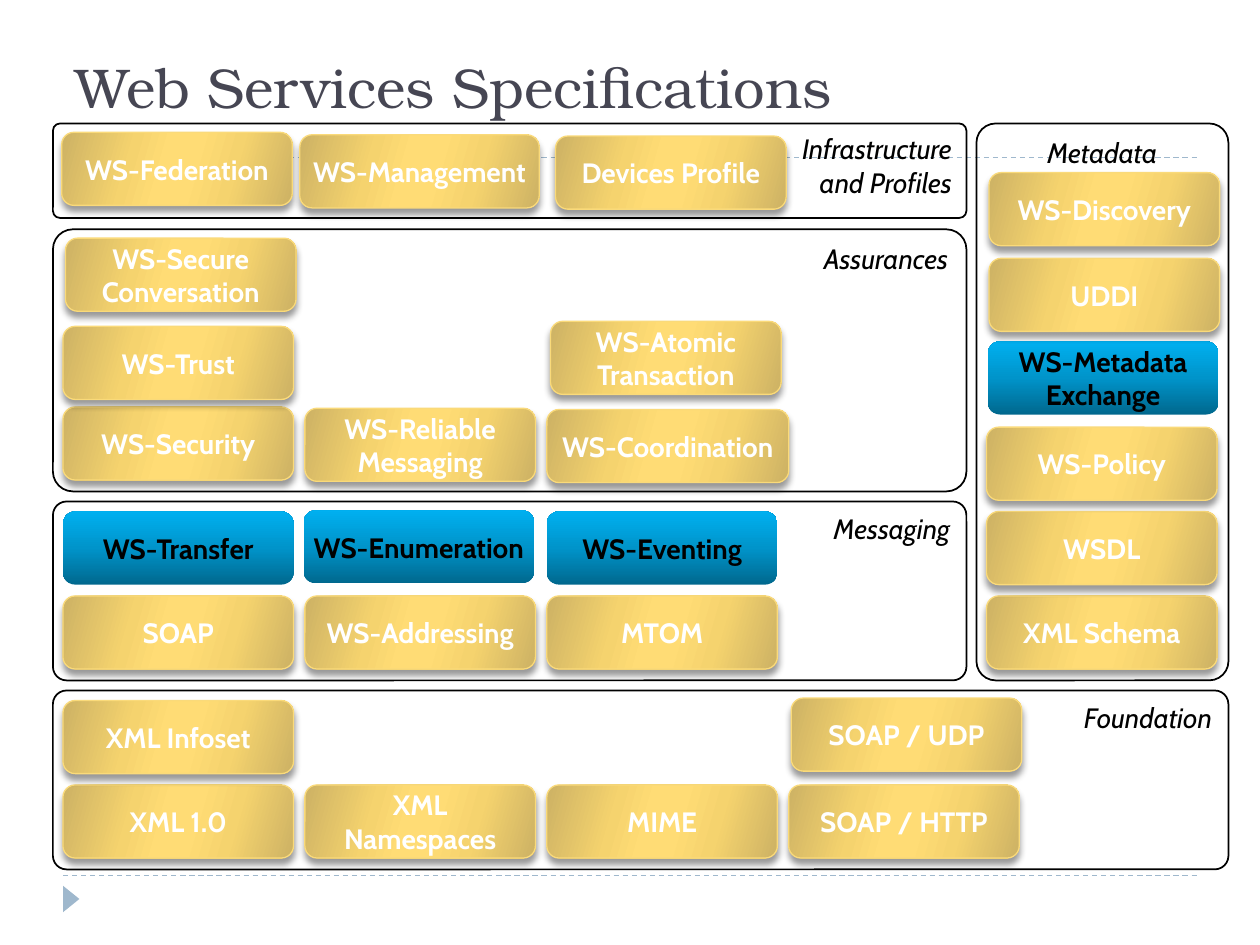
from lxml import etree
from pptx import Presentation
from pptx.dml.color import RGBColor
from pptx.enum import dml, shapes, text
from pptx.oxml import ns
from pptx.util import Inches, Pt

BLACK = RGBColor(0x00, 0x00, 0x00)
WHITE = RGBColor(0xFF, 0xFF, 0xFF)
SLATE = RGBColor(0x46, 0x46, 0x53)
MIST = RGBColor(0x9F, 0xB8, 0xCD)
GOLD_EDGE = RGBColor(0xFA, 0xDA, 0x7A)
GOLD_DARK = RGBColor(0xCD, 0xB2, 0x64)
GOLD_MID = RGBColor(0xF5, 0xD3, 0x6E)
GOLD_LIGHT = RGBColor(0xFF, 0xDC, 0x75)
BLUE_DARK = RGBColor(0x00, 0x68, 0x8E)
BLUE_MID = RGBColor(0x00, 0x94, 0xCA)
BLUE_LIGHT = RGBColor(0x00, 0xB0, 0xF0)

# Gradient stops as (percent, colour); angles run counter-clockwise
GOLD = {"stops": [(0, GOLD_DARK), (30, GOLD_MID), (45, GOLD_LIGHT),
                  (55, GOLD_LIGHT), (73, GOLD_MID), (100, GOLD_DARK)],
        "angle": 344, "edge": GOLD_EDGE, "font": WHITE}
BLUE = {"stops": [(0, BLUE_DARK), (50, BLUE_MID), (100, BLUE_LIGHT)],
        "angle": 90, "edge": None, "font": BLACK}

TITLE = "Web Services Specifications"
TITLE_FONT, BODY_FONT = "TeX Gyre Bonum", "Cabin"
RIGHT, CENTER = text.PP_ALIGN.RIGHT, text.PP_ALIGN.CENTER

# label, frame (left, top, width, height), label alignment,
# rows of specifications from the bottom up (None leaves a gap)
PANELS = [
    ("Assurances", (0.42, 1.82, 7.25, 2.08), RIGHT, [
        ["WS-Security", "WS-Reliable\nMessaging", "WS-Coordination"],
        ["WS-Trust", None, "WS-Atomic\nTransaction"],
        ["WS-Secure\nConversation"]]),
    ("Messaging", (0.42, 3.98, 7.25, 1.42), RIGHT, [
        ["SOAP", "WS-Addressing", "MTOM"],
        ["WS-Transfer", "WS-Enumeration", "WS-Eventing"]]),
    ("Metadata", (7.75, 0.98, 2, 4.42), CENTER, [
        ["XML Schema"], ["WSDL"], ["WS-Policy"],
        ["WS-Metadata\nExchange"], ["UDDI"], ["WS-Discovery"]]),
    ("Infrastructure\nand Profiles", (0.42, 0.98, 7.25, 0.75), RIGHT, [
        ["WS-Federation", "WS-Management", "Devices Profile"]]),
    ("Foundation", (0.42, 5.48, 9.33, 1.42), RIGHT, [
        ["XML 1.0", "XML\nNamespaces", "MIME", "SOAP / HTTP"],
        ["XML Infoset", None, None, "SOAP / UDP"]]),
]
HIGHLIGHTED = {"WS-Transfer", "WS-Enumeration", "WS-Eventing",
               "WS-Metadata\nExchange"}
# Small departures from the grid: left, top, extra width
NUDGES = {
    "WS-Reliable\nMessaging": (0, 0.01, 0),
    "WS-Coordination": (0, 0.02, 0.09),
    "WS-Trust": (0, 0.03, 0),
    "WS-Atomic\nTransaction": (0.03, -0.01, 0),
    "WS-Secure\nConversation": (0.02, 0, 0),
    "WS-Enumeration": (-0.01, -0.01, 0),
    "WS-Metadata\nExchange": (0.01, -0.01, 0),
    "UDDI": (0.02, 0, 0),
    "WS-Discovery": (0.02, -0.01, 0),
    "WS-Federation": (-0.01, -0.01, 0),
    "WS-Management": (-0.04, 0.01, 0.07),
    "Devices Profile": (0.07, 0.02, 0),
    "SOAP / UDP": (0.02, -0.02, 0),
}
BOX_W, BOX_H = 1.83, 0.58
GAP = 0.08
MARGIN = 0.08
COLUMN_STEP = BOX_W + GAP + 0.01
ROW_STEP = BOX_H + GAP + 0.01


def write(shape, words, align, anchor, **font_format):
    frame = shape.text_frame
    frame.text = words
    frame.word_wrap = False
    frame.vertical_anchor = anchor
    color = font_format.pop("color")
    for paragraph in frame.paragraphs:
        paragraph.alignment = align
        for run in paragraph.runs:
            run.font.color.rgb = color
            for key, value in font_format.items():
                setattr(run.font, key, value)


def add_rounded(slide, left, top, width, height, corner):
    shape = slide.shapes.add_shape(
        shapes.MSO_SHAPE.ROUNDED_RECTANGLE,
        Inches(left), Inches(top), Inches(width), Inches(height))
    shape.adjustments[0] = corner
    shape.shadow.inherit = False
    return shape


def add_child(parent, tag, **attributes):
    return etree.SubElement(parent, ns.qn(tag), attributes)


def fill_gradient(shape, stops, angle):
    shape.fill.gradient()
    shape.fill.gradient_angle = angle
    stop_list = shape.element.spPr.find(".//" + ns.qn("a:gsLst"))
    for stop in list(stop_list):
        stop_list.remove(stop)
    for percent, color in stops:
        stop = add_child(stop_list, "a:gs", pos=str(percent * 1000))
        add_child(stop, "a:srgbClr", val=str(color))


def drop_shadow(shape):
    effects = shape.element.spPr.find(ns.qn("a:effectLst"))
    shadow = add_child(effects, "a:outerShdw", blurRad=str(Pt(4)),
                       dist=str(Pt(3.4)), dir="5400000", rotWithShape="0")
    color = add_child(shadow, "a:srgbClr", val=str(BLACK))
    add_child(color, "a:alpha", val="40000")


def add_specification(slide, name, left, top):
    dx, dy, extra = NUDGES.get(name, (0, 0, 0))
    style = BLUE if name in HIGHLIGHTED else GOLD
    box = add_rounded(slide, left + dx, top + dy, BOX_W + extra, BOX_H, 0.167)
    fill_gradient(box, style["stops"], style["angle"])
    if style["edge"] is None:
        box.line.fill.background()
    else:
        box.line.color.rgb = style["edge"]
        box.line.width = Pt(0.75)
        drop_shadow(box)
    write(box, name, CENTER, text.MSO_ANCHOR.MIDDLE, name=BODY_FONT,
          size=Pt(16), bold=True, color=style["font"])


def add_panel(slide, label, frame, align, rows):
    panel = add_rounded(slide, *frame, 0.076)
    panel.fill.background()
    panel.line.color.rgb = BLACK
    panel.line.width = Pt(1)
    write(panel, label, align, text.MSO_ANCHOR.TOP, name=BODY_FONT,
          size=Pt(16), italic=True, color=BLACK)
    left, top, _, height = frame
    bottom_row = top + height - MARGIN - BOX_H - 0.01
    for row, names in enumerate(rows):
        for column, name in enumerate(names):
            if name:
                add_specification(slide, name,
                                  left + MARGIN + column * COLUMN_STEP,
                                  bottom_row - row * ROW_STEP)


def add_decoration(slide):
    for y in (6.95, 1.25):
        rule = slide.shapes.add_connector(
            shapes.MSO_CONNECTOR.STRAIGHT,
            Inches(0.5), Inches(y), Inches(9.5), Inches(y))
        rule.line.color.rgb = MIST
        rule.line.width = Pt(0.75)
        rule.line.dash_style = dml.MSO_LINE.DASH
        add_child(rule._element.spPr, "a:effectLst")
    marker = slide.shapes.add_shape(
        shapes.MSO_SHAPE.ISOSCELES_TRIANGLE,
        Inches(0.46), Inches(7.07), Inches(0.21), Inches(0.13))
    marker.rotation = 90
    marker.shadow.inherit = False
    marker.fill.solid()
    marker.fill.fore_color.rgb = MIST
    marker.line.fill.background()


def add_title(slide):
    title = slide.shapes.title
    title.left, title.top = Inches(0.5), Inches(0.33)
    title.width, title.height = Inches(9), Inches(0.67)
    write(title, TITLE, text.PP_ALIGN.LEFT, text.MSO_ANCHOR.BOTTOM,
          name=TITLE_FONT, size=Pt(32), color=SLATE)
    title.text_frame.word_wrap = True
    title.text_frame.auto_size = text.MSO_AUTO_SIZE.NONE


def main():
    deck = Presentation()
    deck.slide_width, deck.slide_height = Inches(10), Inches(7.5)
    slide = deck.slides.add_slide(deck.slide_layouts.get_by_name("Title Only"))
    add_decoration(slide)
    add_title(slide)
    for panel in PANELS:
        add_panel(slide, *panel)
    deck.save("out.pptx")


if __name__ == "__main__":
    main()
